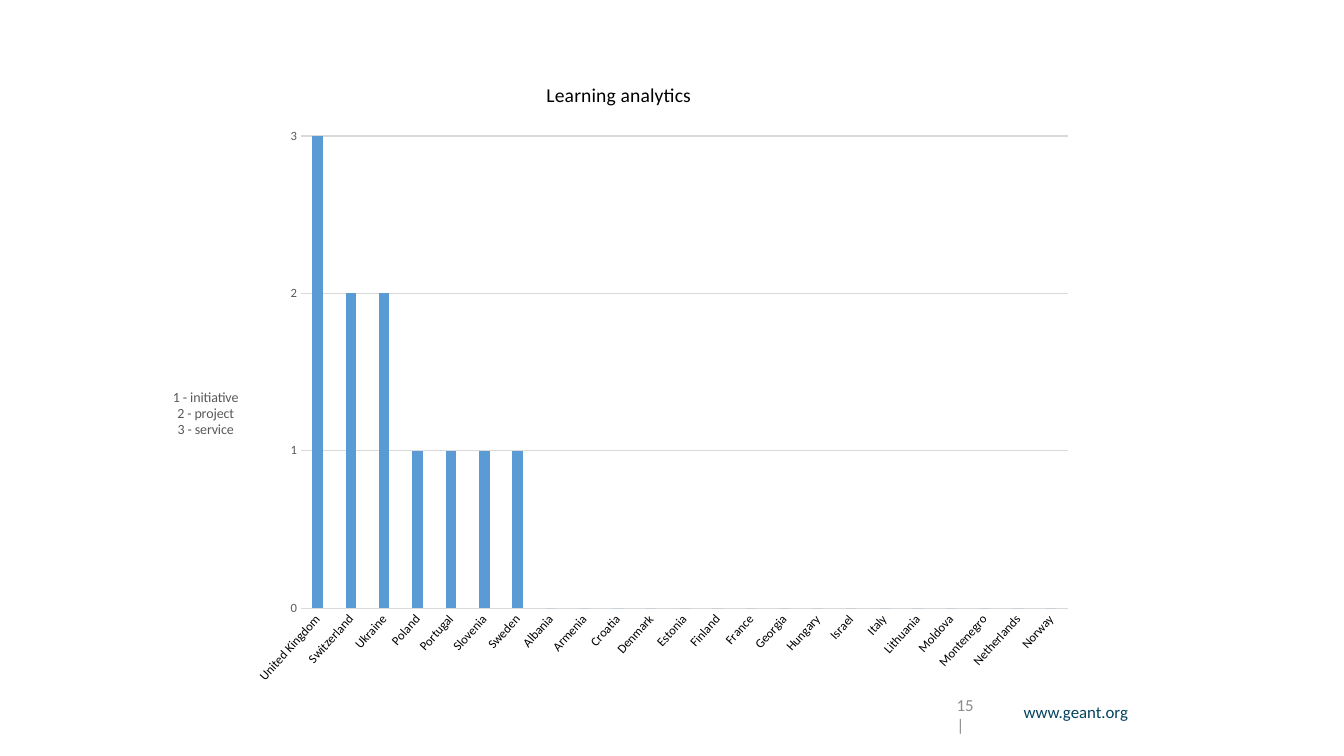
from dataclasses import dataclass

from lxml import etree
from pptx import Presentation
from pptx.chart.data import CategoryChartData
from pptx.dml.color import RGBColor
from pptx.enum.chart import XL_CHART_TYPE, XL_TICK_MARK
from pptx.enum.text import MSO_ANCHOR, PP_ALIGN
from pptx.oxml import parse_xml
from pptx.oxml.ns import nsdecls, qn
from pptx.util import Pt

COLUMN = XL_CHART_TYPE.COLUMN_CLUSTERED
NO_TICK = XL_TICK_MARK.NONE
TOP, MIDDLE = MSO_ANCHOR.TOP, MSO_ANCHOR.MIDDLE
LEFT, RIGHT, CENTER = PP_ALIGN.LEFT, PP_ALIGN.RIGHT, PP_ALIGN.CENTER

FACE = "Calibri"
HEX = {
    "bar": "5B9BD5",
    "grid": "D9D9D9",
    "black": "000000",
    "gray": "595959",
    "page": "8C8C8C",
    "site": "03435F",
}
ACTIVE = {
    "United Kingdom": 3,
    "Switzerland": 2,
    "Ukraine": 2,
    "Poland": 1,
    "Portugal": 1,
    "Slovenia": 1,
    "Sweden": 1,
}
IDLE = [
    "Albania", "Armenia", "Croatia", "Denmark", "Estonia", "Finland",
    "France", "Georgia", "Hungary", "Israel", "Italy", "Lithuania",
    "Moldova", "Montenegro", "Netherlands", "Norway",
]
LEVELS = ["1 - initiative", "2 - project", "3 - service"]
TITLE = "Learning analytics"


@dataclass
class Label:
    text: str
    left: float
    width: float
    color: str
    align: int
    anchor: int
    inset: float = 7.2
    tab: float = 0


LABELS = [
    Label("www.geant.org", 691.9, 121, "site", RIGHT, TOP),
    Label("15\t|", 668.9, 52.6, "page", LEFT, MIDDLE, 14.4, 26),
]


def color(name: str) -> RGBColor:
    return RGBColor.from_string(HEX[name])


def style(font, size: float, name: str) -> None:
    font.name = FACE
    font.size = Pt(size)
    font.bold = False
    font.color.rgb = color(name)


def rule(line) -> None:
    line.color.rgb = color("grid")
    line.width = Pt(0.75)


def place(node, index: int, **spots: float) -> None:
    old = node.find(qn("c:layout"))
    if old is not None:
        node.remove(old)
    layout = parse_xml(f"<c:layout {nsdecls('c')}><c:manualLayout/></c:layout>")
    for tag, value in spots.items():
        etree.SubElement(layout[0], qn(f"c:{tag}")).set("val", str(value))
    node.insert(index, layout)


def add_label(slide, item: Label) -> None:
    box = slide.shapes.add_textbox(
        Pt(item.left), Pt(497.5), Pt(item.width), Pt(26)
    )
    frame = box.text_frame
    frame.word_wrap = True
    frame.margin_left = Pt(item.inset)
    frame.vertical_anchor = item.anchor
    frame.text = item.text
    para = frame.paragraphs[0]
    para.alignment = item.align
    if item.tab:
        tabs = etree.SubElement(para._p.get_or_add_pPr(), qn("a:tabLst"))
        stop = etree.SubElement(tabs, qn("a:tab"))
        stop.set("pos", str(Pt(item.tab)))
        stop.set("algn", "l")
    style(para.font, 12, item.color)


def add_title(owner, lines: list[str], size: float, name: str) -> None:
    frame = owner.text_frame
    frame.text = "\n".join(lines)
    for para in frame.paragraphs:
        para.alignment = CENTER
        style(para.font, size, name)


def add_graph(slide) -> None:
    data = CategoryChartData()
    data.categories = [*ACTIVE, *IDLE]
    data.add_series(TITLE, [*ACTIVE.values(), *[0] * len(IDLE)])
    chart = slide.shapes.add_chart(
        COLUMN, Pt(108), Pt(42.5), Pt(668.2), Pt(455.8), data
    ).chart
    style(chart.font, 10, "black")
    chart.has_legend = False
    chart.has_title = True
    add_title(chart.chart_title, [TITLE], 14, "black")

    plot = chart.plots[0]
    plot.vary_by_categories = False
    plot.gap_width = 219
    plot.overlap = -27
    fill = plot.series[0].format.fill
    fill.solid()
    fill.fore_color.rgb = color("bar")

    lands, levels = chart.category_axis, chart.value_axis
    for axis, name in ((lands, "black"), (levels, "gray")):
        axis.major_tick_mark = NO_TICK
        axis.minor_tick_mark = NO_TICK
        style(axis.tick_labels.font, 9, name)
    rule(lands.format.line)
    body = lands._element.find(qn("c:txPr")).find(qn("a:bodyPr"))
    body.set("rot", str(-48 * 60000))
    body.set("vert", "horz")

    levels.minimum_scale = 0
    levels.maximum_scale = 3
    levels.major_unit = 1
    levels.format.line.fill.background()
    rule(levels.major_gridlines.format.line)
    add_title(levels.axis_title, LEVELS, 10, "gray")
    turn = levels.axis_title.text_frame._txBody.find(qn("a:bodyPr"))
    turn.set("rot", "0")
    turn.set("vert", "horz")
    place(levels.axis_title._element, 1,
          xMode="edge", yMode="edge", x=0.02, y=0.51)
    place(chart._chartSpace.chart.plotArea, 0, layoutTarget="inner",
          xMode="edge", yMode="edge", x=0.16, y=0.12, w=0.82, h=0.74)


def main() -> None:
    deck = Presentation()
    deck.slide_width = Pt(960)
    deck.slide_height = Pt(540)
    slide = deck.slides.add_slide(deck.slide_layouts[6])
    for item in LABELS:
        add_label(slide, item)
    add_graph(slide)
    deck.save("out.pptx")


if __name__ == "__main__":
    main()
